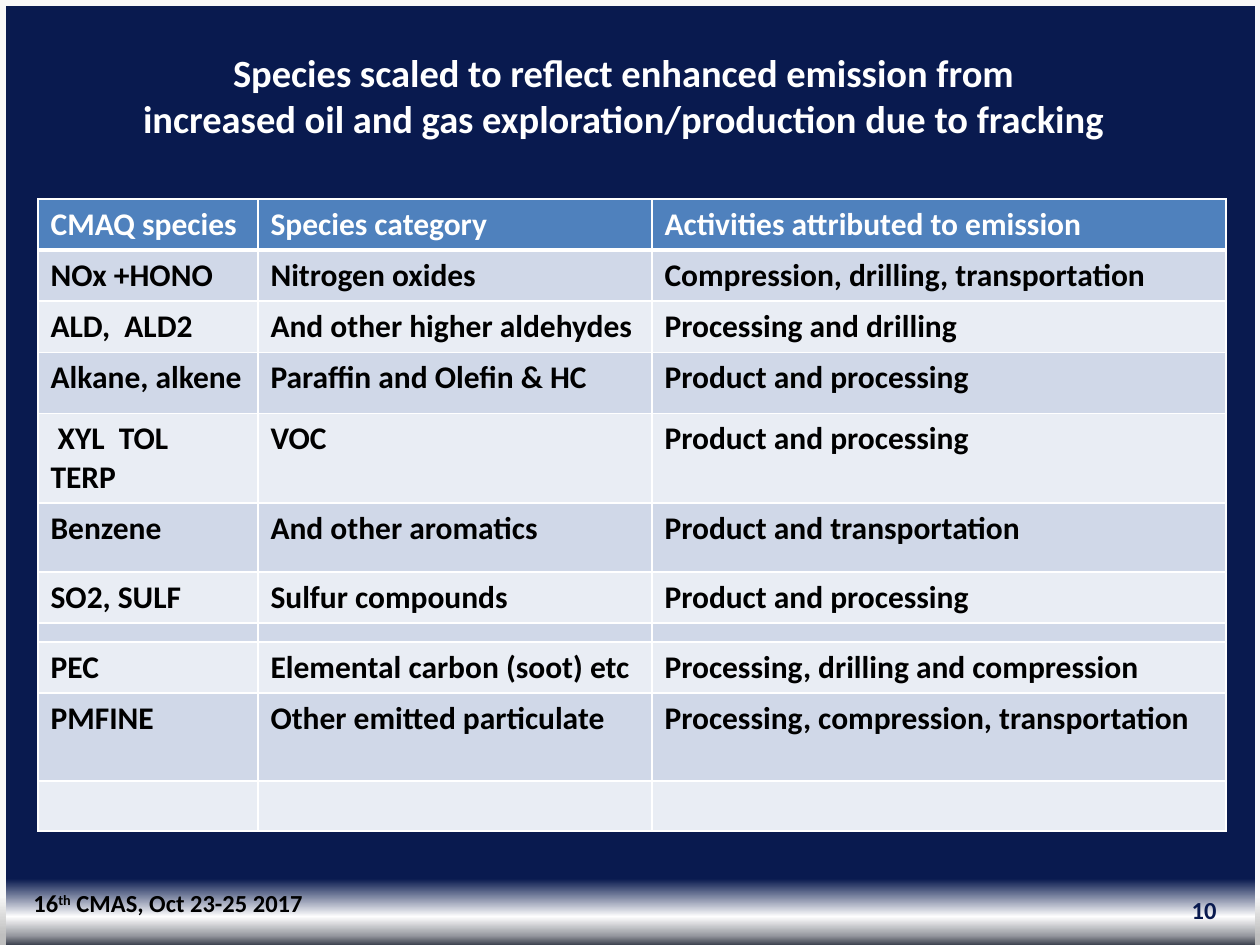
"""Build the slide on species scaled for oil and gas emission."""
from typing import NamedTuple

from pptx import Presentation
from pptx.dml.color import RGBColor
from pptx.enum.shapes import MSO_SHAPE as Shape
from pptx.enum.text import MSO_ANCHOR as Anchor, MSO_AUTO_SIZE as Fit, PP_ALIGN as Align
from pptx.oxml.ns import qn
from pptx.oxml.xmlchemy import OxmlElement as Node
from pptx.util import Emu, Pt

SCALE = 914400 // 126
NAVY = RGBColor(0x09, 0x1A, 0x4F)
WHITE = RGBColor(0xFF, 0xFF, 0xFF)
BLACK = RGBColor(0x00, 0x00, 0x00)
PALE = RGBColor(0xF8, 0xF8, 0xF8)
BLUE = RGBColor(0x4F, 0x81, 0xBD)
BANDS = (RGBColor(0xD0, 0xD8, 0xE8), RGBColor(0xE9, 0xED, 0xF4))
SKY = [(0, NAVY), (93, NAVY), (97, RGBColor(0xFE, 0xFE, 0xFE)),
       (99, RGBColor(0x97, 0x99, 0xA0)), (100, RGBColor(0x3C, 0x41, 0x4E))]
EDGE = [(0, PALE), (95, RGBColor(0xF5, 0xF5, 0xF5)), (99, RGBColor(0xBF, 0xBF, 0xBF))]


class Box(NamedTuple):
    left: int
    top: int
    width: int
    height: int


class Row(NamedTuple):
    height: int
    texts: tuple[str, str, str] = ("", "", "")


class Bar(NamedTuple):
    box: Box
    stops: list


COLS = (220, 394, 574)
ROWS = [
    Row(50, ("CMAQ species", "Species category", "Activities attributed to emission")),
    Row(50, ("NOx +HONO", "Nitrogen oxides", "Compression, drilling, transportation")),
    Row(50, ("ALD,  ALD2", "And other higher aldehydes", "Processing and drilling")),
    Row(61, ("Alkane, alkene", "Paraffin and Olefin & HC", "Product and processing")),
    Row(88, (" XYL  TOL  TERP", "VOC", "Product and processing")),
    Row(69, ("Benzene", "And other aromatics", "Product and transportation")),
    Row(50, ("SO2, SULF", "Sulfur compounds", "Product and processing")),
    Row(19),
    Row(50, ("PEC", "Elemental carbon (soot) etc", "Processing, drilling and compression")),
    Row(88, ("PMFINE", "Other emitted particulate", "Processing, compression, transportation")),
    Row(50),
]
BARS = [
    Bar(Box(0, 0, 6, 945), EDGE),
    Bar(Box(3, 0, 1257, 6), [(0, PALE), (100, PALE)]),
    Bar(Box(1255, 0, 6, 945), EDGE),
]


def px(num: int) -> Emu:
    """Turn px into EMU."""
    return Emu(num * SCALE)


def place(box: Box) -> list[Emu]:
    """Turn a box into EMU lengths."""
    return [px(num) for num in box]


def style(para, size: int, color: RGBColor, align=Align.LEFT) -> None:
    """Set the bold font and the alignment of a paragraph."""
    font = para.font
    font.name, font.size, font.bold = "Calibri", Pt(size), True
    font.color.rgb = color
    para.alignment = align


def solid(color: RGBColor):
    """Make a solid colour node."""
    fill, tone = Node("a:solidFill"), Node("a:srgbClr")
    tone.set("val", str(color))
    fill.append(tone)
    return fill


def shade(fill, root, stops: list) -> None:
    """Give a fill a gradient that runs downward."""
    fill.gradient()
    fill.gradient_angle = 270
    items = root.find(".//" + qn("a:gsLst"))
    for old in list(items):
        items.remove(old)
    for spot, color in stops:
        stop = Node("a:gs")
        stop.set("pos", str(spot * 1000))
        stop.append(solid(color)[0])
        items.append(stop)


def draw_bar(slide, bar: Bar) -> None:
    """Draw one bar of the frame."""
    shape = slide.shapes.add_shape(Shape.RECTANGLE, *place(bar.box))
    shape.shadow.inherit = False
    shape.line.fill.background()
    shade(shape.fill, shape._element, bar.stops)


def add_box(slide, box: Box):
    """Add an empty text box and return its frame."""
    frame = slide.shapes.add_textbox(*place(box)).text_frame
    frame.word_wrap = True
    return frame


def edge(cell, top: int, low: int) -> None:
    """Draw white borders round a cell."""
    props = cell._tc.get_or_add_tcPr()
    sides = (("L", 1), ("R", 1), ("T", top), ("B", low))
    for spot, (side, width) in enumerate(sides):
        line = Node(f"a:ln{side}")
        line.set("w", str(Pt(width)))
        line.append(solid(WHITE))
        props.insert(spot, line)


def draw_cell(cell, text: str, num: int) -> None:
    """Fill and format one cell of row num."""
    cell.fill.solid()
    cell.fill.fore_color.rgb = BANDS[(num - 1) % 2] if num else BLUE
    edge(cell, 3 if num == 1 else 1, 1 if num else 3)
    cell.text = text
    if not text:
        cell.margin_top = cell.margin_bottom = 0
    style(cell.text_frame.paragraphs[0], 18 if text else 3, BLACK if num else WHITE)


def draw_table(slide) -> None:
    """Draw the species table."""
    box = Box(38, 199, sum(COLS), sum(row.height for row in ROWS))
    table = slide.shapes.add_table(len(ROWS), len(COLS), *place(box)).table
    for col, width in zip(table.columns, COLS):
        col.width = px(width)
    for num, row in enumerate(ROWS):
        table.rows[num].height = px(row.height)
        for cell, text in zip(table.rows[num].cells, row.texts):
            draw_cell(cell, text, num)


def draw_title(slide) -> None:
    """Fill and place the title."""
    title = slide.shapes.title
    title.left, title.top, title.width, title.height = place(Box(116, 43, 1015, 106))
    frame = title.text_frame
    frame.text = ("Species scaled to reflect enhanced emission from\n"
                  "increased oil and gas exploration/production due to fracking")
    frame.auto_size, frame.vertical_anchor = Fit.NONE, Anchor.TOP
    for para in frame.paragraphs:
        style(para, 22, WHITE, Align.CENTER)


def draw_foot(slide) -> None:
    """Draw the page number and the event."""
    page = add_box(slide, Box(935, 885, 294, 50))
    page.text, page.vertical_anchor = "10", Anchor.MIDDLE
    style(page.paragraphs[0], 14, NAVY, Align.RIGHT)
    para = add_box(slide, Box(21, 882, 310, 42)).paragraphs[0]
    for text in ("16", "th", " CMAS, Oct 23-25 2017"):
        para.add_run().text = text
    para.runs[1].font._element.set("baseline", "30000")
    style(para, 14, BLACK)


def main() -> None:
    """Build and save the slide."""
    deck = Presentation()
    deck.slide_width, deck.slide_height = px(1260), px(945)
    slide = deck.slides.add_slide(deck.slide_layouts[5])
    shade(slide.background.fill, slide._element, SKY)
    for bar in BARS:
        draw_bar(slide, bar)
    draw_title(slide)
    draw_table(slide)
    draw_foot(slide)
    deck.save("out.pptx")


if __name__ == "__main__":
    main()
